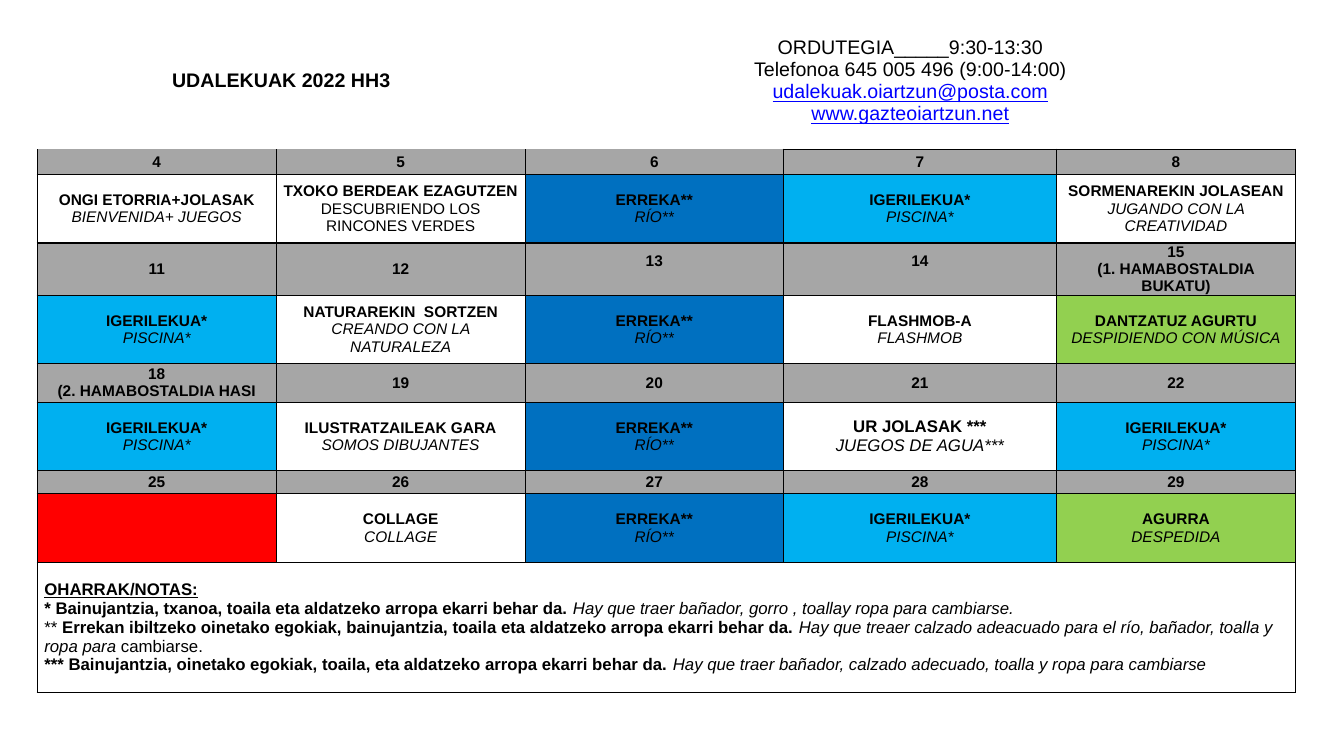
from pptx import Presentation
from pptx.dml.color import RGBColor
from pptx.enum.text import MSO_ANCHOR, PP_ALIGN
from pptx.oxml.ns import qn
from pptx.util import Inches, Pt
from lxml.etree import SubElement

COLOURS = {
    "ink": "000000", "paper": "FFFFFF", "link": "0000FF", "day": "A6A6A6",
    "river": "0070C0", "pool": "00B0F0", "party": "92D050", "closed": "FF0000",
}
COLUMN_WIDTHS = [2.37, 2.47, 2.56, 2.71, 2.37]
ROW_HEIGHTS = [1.35, 0.25, 0.68, 0.52, 0.68, 0.38, 0.68, 0.23, 0.68, 1.29]
FIRST_DAY = 4
DAY_NOTES = {15: "(1. HAMABOSTALDIA BUKATU)", 18: "(2. HAMABOSTALDIA HASI"}
RAISED_DAYS = (13, 14)

POOL = ("IGERILEKUA*", "PISCINA*", "pool")
RIVER = ("ERREKA**", "RÍO**", "river")
WEEKS = [
    [("ONGI ETORRIA+JOLASAK", "BIENVENIDA+ JUEGOS", "paper"),
     ("TXOKO BERDEAK EZAGUTZEN", "DESCUBRIENDO LOS RINCONES VERDES", "paper"),
     RIVER, POOL,
     ("SORMENAREKIN JOLASEAN", "JUGANDO CON LA CREATIVIDAD", "paper")],
    [POOL, ("NATURAREKIN  SORTZEN", "CREANDO CON LA NATURALEZA", "paper"),
     RIVER, ("FLASHMOB-A", "FLASHMOB", "paper"),
     ("DANTZATUZ AGURTU", "DESPIDIENDO CON MÚSICA", "party")],
    [POOL, ("ILUSTRATZAILEAK GARA", "SOMOS DIBUJANTES", "paper"),
     RIVER, ("UR JOLASAK ***", "JUEGOS DE AGUA***", "paper"), POOL],
    [None, ("COLLAGE", "COLLAGE", "paper"),
     RIVER, POOL, ("AGURRA", "DESPEDIDA", "party")],
]
LARGE_ACTIVITY = "UR JOLASAK ***"
UPRIGHT_ACTIVITY = "TXOKO BERDEAK EZAGUTZEN"

CONTACT = [
    [("ORDUTEGIA_____9:30-13:30", "")],
    [("Telefonoa 645 005 496 (9:00-14:00)", "")],
    [("udalekuak.oiartzun@posta.com", "ul")],
    [("www.gazteoiartzun.net", "ul")],
]
NOTES = [
    [("OHARRAK/NOTAS:", "bu")],
    [("* Bainujantzia, txanoa, toaila eta aldatzeko arropa ekarri behar da. ", "b"),
     ("Hay que traer bañador, gorro , toallay ropa para cambiarse.", "i")],
    [("** ", ""),
     ("Errekan ibiltzeko oinetako egokiak, bainujantzia, toaila eta aldatzeko "
      "arropa ekarri behar da. ", "b"),
     ("Hay que treaer calzado adeacuado para el río, bañador, toalla y ropa para ", "i"),
     ("cambiarse.", "")],
    [("*** Bainujantzia, oinetako egokiak, toaila, eta aldatzeko arropa "
      "ekarri behar da. ", "b"),
     ("Hay que traer bañador, calzado adecuado, toalla y ropa para cambiarse", "i")],
]


def colour(name):
    return RGBColor.from_string(COLOURS[name])


def set_borders(cell, edges):
    properties = cell._tc.get_or_add_tcPr()
    for side in ("L", "R", "T", "B"):
        line = SubElement(properties, qn(f"a:ln{side}"), w=str(Pt(1)))
        if edges[side] is None:
            SubElement(line, qn("a:noFill"))
        else:
            fill = SubElement(line, qn("a:solidFill"))
            SubElement(fill, qn("a:srgbClr"), val=COLOURS[edges[side]])


def frame_cells(table):
    for row_index, row in enumerate(table.rows):
        for column_index, cell in enumerate(row.cells):
            edges = dict.fromkeys("LRTB", "ink")
            if row_index == 0:
                edges = dict.fromkeys("LRT", "paper")
                edges["B"] = "ink" if column_index > 2 else None
            elif row_index == 1 and column_index < 3:
                edges["T"] = None
            set_borders(cell, edges)
            cell.vertical_anchor = MSO_ANCHOR.MIDDLE
            cell.margin_left = cell.margin_right = Inches(0.07)
            cell.margin_top = cell.margin_bottom = 0
            cell.fill.background()


def paint(cell, name):
    cell.fill.solid()
    cell.fill.fore_color.rgb = colour(name)


def write(cell, lines, size, align=PP_ALIGN.CENTER):
    frame = cell.text_frame
    for index, line in enumerate(lines):
        paragraph = frame.add_paragraph() if index else frame.paragraphs[0]
        paragraph.alignment = align
        for wording, style in line:
            run = paragraph.add_run()
            run.text = wording
            run.font.name = "Arial"
            run.font.size = Pt(size)
            run.font.bold = "b" in style
            run.font.italic = "i" in style
            run.font.underline = "u" in style
            run.font.color.rgb = colour("link" if "l" in style else "ink")


def write_day(cell, day):
    paint(cell, "day")
    labels = [str(day)] + ([DAY_NOTES[day]] if day in DAY_NOTES else [])
    write(cell, [[(label, "b")] for label in labels], 11)
    if day in RAISED_DAYS:
        cell.margin_bottom = Inches(0.16)


def write_activity(cell, activity):
    if activity is None:
        paint(cell, "closed")
        return
    basque, spanish, kind = activity
    paint(cell, kind)
    spanish_style = "" if basque == UPRIGHT_ACTIVITY else "i"
    size = 12 if basque == LARGE_ACTIVITY else 11
    write(cell, [[(basque, "b")], [(spanish, spanish_style)]], size)


def add_calendar(slide):
    calendar = slide.shapes.add_table(
        len(ROW_HEIGHTS), len(COLUMN_WIDTHS), Inches(0.37), Inches(0.13),
        Inches(sum(COLUMN_WIDTHS)), Inches(sum(ROW_HEIGHTS))).table
    calendar.first_row = calendar.horz_banding = False
    for column, width in zip(calendar.columns, COLUMN_WIDTHS):
        column.width = Inches(width)
    for row, height in zip(calendar.rows, ROW_HEIGHTS):
        row.height = Inches(height)
    frame_cells(calendar)
    return calendar


def main():
    presentation = Presentation()
    presentation.slide_width = Inches(13.33)
    presentation.slide_height = Inches(7.5)
    slide = presentation.slides.add_slide(presentation.slide_layouts[6])
    calendar = add_calendar(slide)

    heading, contact, notes = (calendar.cell(*at) for at in ((0, 0), (0, 2), (9, 0)))
    heading.merge(calendar.cell(0, 1))
    contact.merge(calendar.cell(0, 4))
    notes.merge(calendar.cell(9, 4))
    write(heading, [[("UDALEKUAK 2022 HH3", "b")]], 14)
    write(contact, CONTACT, 14)
    write(notes, NOTES, 12, PP_ALIGN.LEFT)

    for week, activities in enumerate(WEEKS):
        for weekday, activity in enumerate(activities):
            day_row = 1 + 2 * week
            write_day(calendar.cell(day_row, weekday), FIRST_DAY + 7 * week + weekday)
            write_activity(calendar.cell(day_row + 1, weekday), activity)

    presentation.save("out.pptx")


if __name__ == "__main__":
    main()
